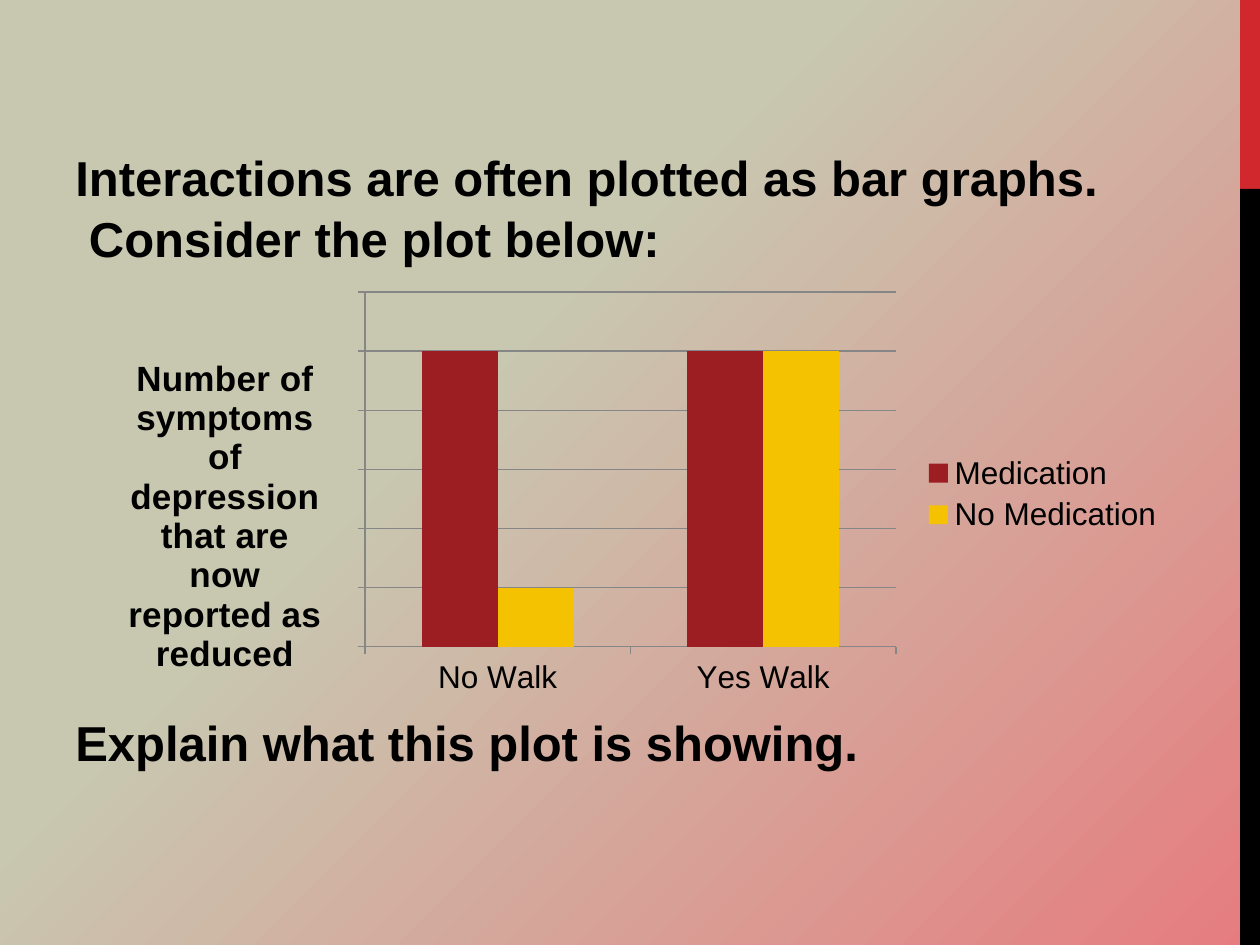
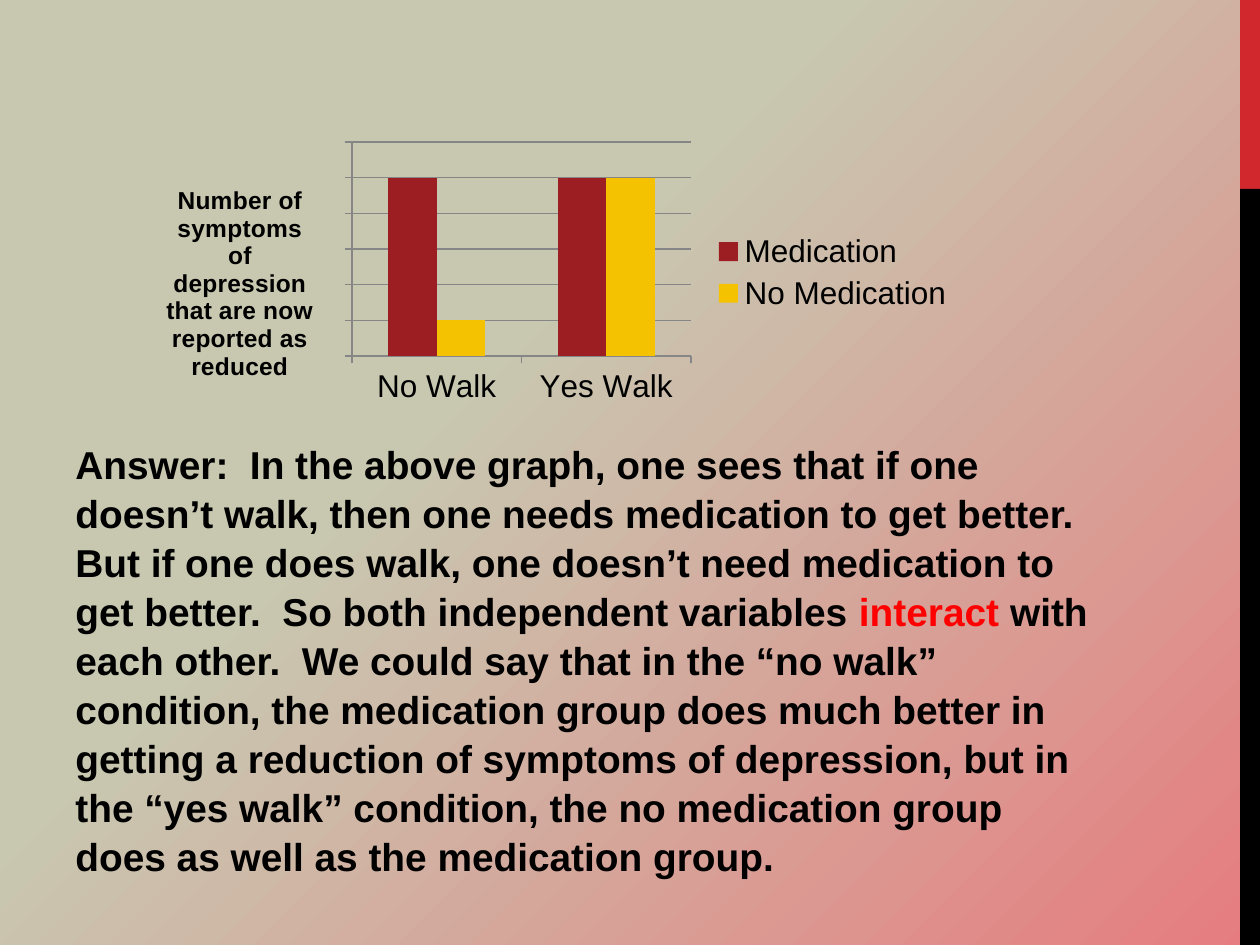
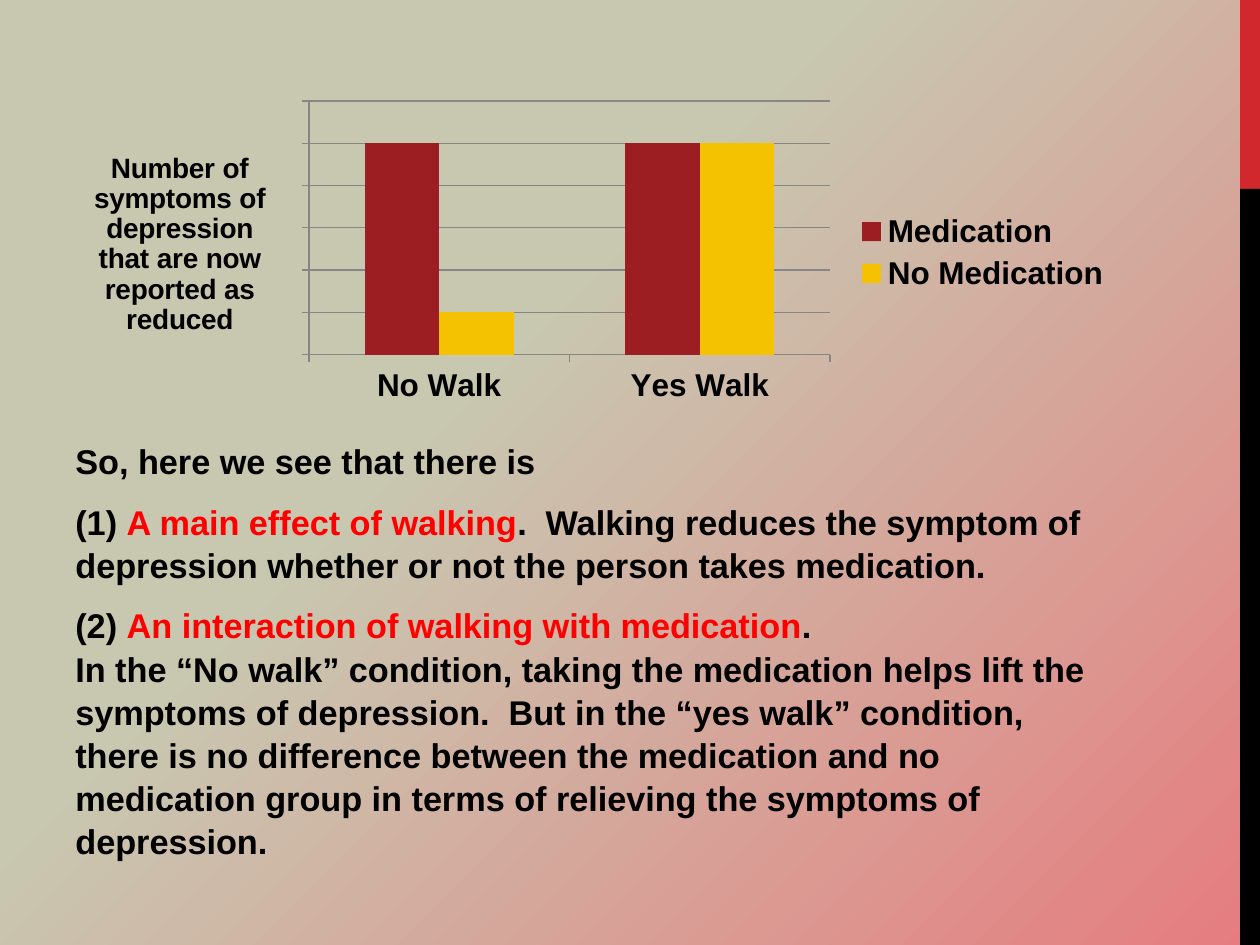
from dataclasses import dataclass

from pptx import Presentation
from pptx.chart.data import CategoryChartData
from pptx.dml.color import RGBColor
from pptx.enum.chart import (
    XL_CHART_TYPE, XL_LEGEND_POSITION, XL_TICK_LABEL_POSITION, XL_TICK_MARK)
from pptx.enum.shapes import MSO_SHAPE
from pptx.oxml import parse_xml
from pptx.oxml.ns import nsdecls
from pptx.util import Emu, Pt

SCALE = 914400 / 126  # EMU in one px
WIDE, HIGH = 1260, 945


@dataclass(frozen=True)
class Theme:
    font: str = "Arial"
    ink: str = "000000"
    accent: str = "FF0000"
    sand: str = "C8C8B1"
    rose: str = "E67C7F"
    band: str = "D1282E"
    grid: str = "868686"
    bars: tuple = ("9C1D22", "F5C201")
    lead: float = 28
    answer: float = 22.2
    points: float = 19.6
    label: float = 18
    leading: float = 1.05


THEME = Theme()
AXIS = "Number of symptoms of depression that are now reported as reduced"
GROUPS = ("No Walk", "Yes Walk")
SERIES = {"Medication": (100, 100), "No Medication": (20, 100)}

ANSWER = (
    "Answer:  In the above graph, one sees that if one doesn’t walk, then one "
    "needs medication to get better.   But if one does walk, one doesn’t need "
    "medication to get better.  So both independent variables *interact* with "
    "each other.  We could say that in the “no walk” condition, the medication "
    "group does much better in getting a reduction of symptoms of depression, "
    "but in the “yes walk” condition, the no medication group does as well as "
    "the medication group.")
POINTS = (
    "So, here we see that there is",
    "(1) *A main effect of walking*.  Walking reduces the symptom of depression "
    "whether or not the person takes medication.",
    "(2) *An interaction of walking with medication*.\n"
    "In the “No walk” condition, taking the medication helps lift the symptoms "
    "of depression.  But in the “yes walk” condition, there is no difference "
    "between the medication and no medication group in terms of relieving the "
    "symptoms of depression.")


def px(count):
    return Emu(round(count * SCALE))


def rgb(code):
    return RGBColor.from_string(code)


def style(font, size, bold, color=THEME.ink):
    font.name, font.size, font.bold = THEME.font, Pt(size), bold
    font.color.rgb = rgb(color)


def add_bar(slide, top, height, color):
    """Draw one piece of the band on the right edge."""
    bar = slide.shapes.add_shape(
        MSO_SHAPE.RECTANGLE, px(1240), px(top), px(20), px(height))
    bar.shadow.inherit = False
    bar.fill.solid()
    bar.fill.fore_color.rgb = rgb(color)
    bar.line.fill.background()


def paint(master):
    """Give the master its diagonal gradient."""
    fill = master.background.fill
    fill.gradient()
    fill.gradient_angle = 315
    stops = ((0.38, THEME.sand), (1, THEME.rose))
    for stop, (place, color) in zip(fill.gradient_stops, stops):
        stop.position = place
        stop.color.rgb = rgb(color)


def add_slide(deck):
    slide = deck.slides.add_slide(deck.slide_layouts[6])
    add_bar(slide, 0, 189, THEME.band)
    add_bar(slide, 189, HIGH - 189, THEME.ink)
    return slide


def add_text(slide, top, height, size, *lines):
    """Add bold paragraphs; words between asterisks take the accent colour."""
    box = slide.shapes.add_textbox(px(63), px(top), px(1050), px(height))
    frame = box.text_frame
    frame.word_wrap = True
    for index, line in enumerate(lines):
        para = frame.add_paragraph() if index else frame.paragraphs[0]
        style(para.font, size, True)
        para.line_spacing = THEME.leading
        para.space_before = Pt(round(size * 0.2)) if index else Pt(0)
        para.space_after = Pt(6)
        for turn, part in enumerate(line.split("*")):
            for row, text in enumerate(part.split("\n")):
                if row:
                    para.add_line_break()
                run = para.add_run()
                run.text = text
                if turn % 2:
                    run.font.color.rgb = rgb(THEME.accent)


def set_layout(parent, index, frame, box, inner=False):
    """Fix a chart part at a box (left, top and perhaps size) on the slide."""
    for old in parent.xpath("./c:layout"):
        parent.remove(old)
    left, top, width, height = frame
    parts = ["<c:layoutTarget val='inner'/>"] if inner else []
    parts += ["<c:xMode val='edge'/>", "<c:yMode val='edge'/>"]
    shares = ((box[0] - left) / width, (box[1] - top) / height)
    if inner:
        shares += (box[2] / width, box[3] / height)
    parts += [f"<c:{key} val='{share:.4f}'/>" for key, share in zip("xywh", shares)]
    parent.insert(index, parse_xml(
        f"<c:layout {nsdecls('c')}><c:manualLayout>{''.join(parts)}"
        "</c:manualLayout></c:layout>"))


def add_title(axis, frame, spot, size):
    """Add the level title of the value axis."""
    title = axis.axis_title
    para = title.text_frame.paragraphs[0]
    run = para.add_run()
    run.text = AXIS
    style(para.font, size, True)
    style(run.font, size, True)
    body = title._element.xpath(".//a:bodyPr")[0]
    body.set("rot", "0")
    body.set("vert", "horz")
    set_layout(title._element, 1, frame, spot)


def add_graph(slide, frame, plot, spot, size, bold=False):
    data = CategoryChartData()
    data.categories = GROUPS
    for name, values in SERIES.items():
        data.add_series(name, values)
    chart = slide.shapes.add_chart(
        XL_CHART_TYPE.COLUMN_CLUSTERED, *map(px, frame), data).chart
    style(chart.font, THEME.label, False)
    chart.has_title = False
    chart.has_legend = True
    chart.legend.position = XL_LEGEND_POSITION.RIGHT
    chart.legend.include_in_layout = False
    style(chart.legend.font, THEME.label, bold)

    bars = chart.plots[0]
    bars.vary_by_categories = False
    bars.gap_width, bars.overlap = 150, 0
    for series, color in zip(bars.series, THEME.bars):
        series.format.fill.solid()
        series.format.fill.fore_color.rgb = rgb(color)

    base, scale = chart.category_axis, chart.value_axis
    style(base.tick_labels.font, THEME.label, bold)
    scale.minimum_scale, scale.maximum_scale, scale.major_unit = 0, 120, 20
    scale.tick_label_position = XL_TICK_LABEL_POSITION.NONE
    scale.has_major_gridlines = True
    for axis in (base, scale):
        axis.major_tick_mark = XL_TICK_MARK.OUTSIDE
    for part in (base, scale, scale.major_gridlines):
        part.format.line.color.rgb = rgb(THEME.grid)
        part.format.line.width = Pt(0.75)

    add_title(scale, frame, spot, size)
    area = chart._chartSpace.xpath(".//c:plotArea")[0]
    set_layout(area, 0, frame, plot, inner=True)


def main():
    deck = Presentation()
    deck.slide_width, deck.slide_height = px(WIDE), px(HIGH)
    paint(deck.slide_master)

    slide = add_slide(deck)
    add_text(slide, 138, 140, THEME.lead,
             "Interactions are often plotted as bar graphs.  Consider the plot below:")
    add_text(slide, 703, 80, THEME.lead, "Explain what this plot is showing.")
    add_graph(slide, (116, 284, 1061, 420), (365, 292, 531, 355), (122, 349), 20)

    slide = add_slide(deck)
    add_text(slide, 432, 413, THEME.answer, ANSWER)
    add_graph(slide, (158, 136, 809, 273), (352, 142, 339, 214), (162, 180), 14)

    slide = add_slide(deck)
    add_text(slide, 432, 413, THEME.points, *POINTS)
    add_graph(slide, (84, 95, 1040, 315), (309, 101, 521, 254), (89, 145), 16,
              bold=True)

    deck.save("out.pptx")


if __name__ == "__main__":
    main()
